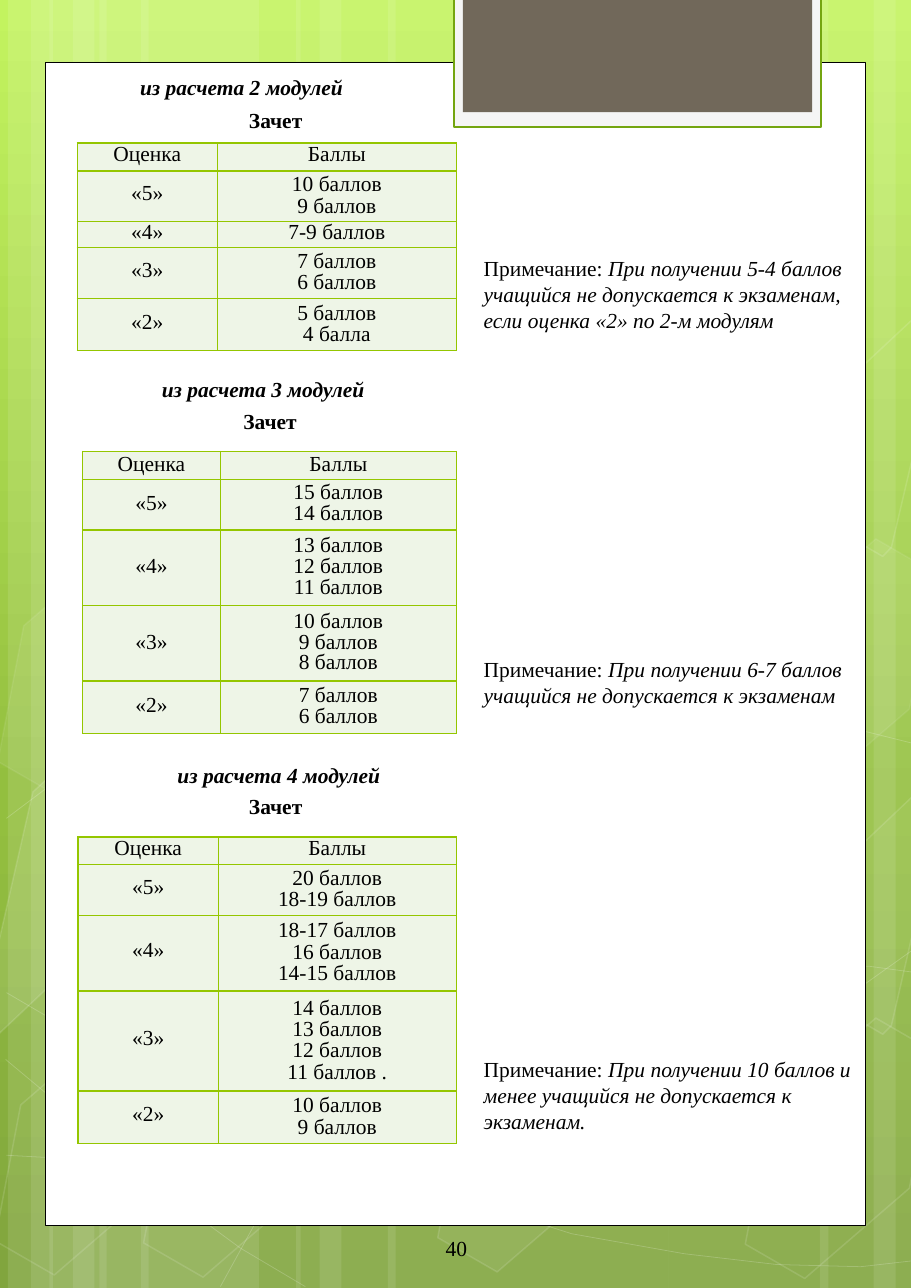
from copy import deepcopy

from lxml import etree
from pptx import Presentation
from pptx.dml.color import RGBColor
from pptx.enum.shapes import MSO_SHAPE
from pptx.enum.text import MSO_ANCHOR, PP_ALIGN
from pptx.oxml.ns import qn
from pptx.util import Cm, Pt

RECTANGLE, HEXAGON = MSO_SHAPE.RECTANGLE, MSO_SHAPE.HEXAGON
LEFT, CENTER, MIDDLE = PP_ALIGN.LEFT, PP_ALIGN.CENTER, MSO_ANCHOR.MIDDLE
WHITE, BLACK, GREEN = "FFFFFF", "000000", "94C600"
FONT = "Times New Roman"
TABLE_RIGHT = 10.52


def paint(shape, fill=None, fill_alpha=100, line=None, width=1, line_alpha=100):
    """Set fill and line; alphas are percent of opacity."""
    shape.shadow.inherit = False
    for part, color, alpha, where in (
        (shape.fill, fill, fill_alpha, "a:solidFill/a:srgbClr"),
        (shape.line.fill, line, line_alpha, "a:ln/a:solidFill/a:srgbClr"),
    ):
        if color is None:
            part.background()
            continue
        part.solid()
        part.fore_color.rgb = RGBColor.from_string(color)
        if alpha < 100:
            srgb = shape.element.spPr.xpath(where)[0]
            etree.SubElement(srgb, qn("a:alpha"), val=str(alpha * 1000))
    if line:
        shape.line.width = Pt(width)


def write(frame, text, align=LEFT, bold=False, italic=False, tail="", spacing=None):
    """Write lines of text, with an italic tail after the last one."""
    frame.text = text
    if tail:
        frame.paragraphs[-1].add_run().text = tail
    for paragraph in frame.paragraphs:
        paragraph.alignment = align
        if spacing:
            paragraph.line_spacing = Pt(spacing)
        for run in paragraph.runs:
            run.font.name, run.font.size = FONT, Pt(14)
            run.font.bold = bold
            run.font.italic = italic or run.text == tail
            run.font.color.rgb = RGBColor.from_string(BLACK)


prs = Presentation()
prs.slide_width, prs.slide_height = Cm(21), Cm(29.7)
slide = prs.slides.add_slide(prs.slide_layouts[6])
shapes = slide.shapes

# Green gradient background
background = slide.background.fill
background.gradient()
background.gradient_angle = 270
stop_list = slide.element.xpath(".//a:gsLst")[0]
stop_list.insert(1, deepcopy(stop_list[0]))
gradient = [(0, "C3F35F"), (0.62, "93BF3F"), (1, "81A53E")]
for stop, (position, color) in zip(background.gradient_stops, gradient):
    stop.position = position
    stop.color.rgb = RGBColor.from_string(color)

# Translucent vertical bands: left, width
bands = [(2.29, 3.68), (0.18, 1.04), (0.71, 1.75), (3.25, 3.68), (1.14, 1.04),
         (1.68, 1.75), (15.42, 3.68), (20.14, 1.04), (18.9, 1.75),
         (8.94, 6.48), (6.83, 1.04), (7.37, 1.75)]
for left, width in bands:
    band = shapes.add_shape(RECTANGLE, Cm(left), 0, Cm(width), prs.slide_height)
    paint(band, WHITE, 10)

# Thin sweeping lines
sweeps = [
    [(0.15, 26.64), (3.99, 26.85), (9.63, 26.34), (16.64, 24.43), (19.38, 23.09),
     (21.16, 21.82)],
    [(0.15, 18.87), (2.54, 17.07), (7.29, 15.32), (13.74, 15.32), (21.16, 17.17)],
    [(0.13, 24.43), (3.84, 27.53), (5.54, 28.78), (7.04, 29.67)],
    [(0.15, 22.89), (2.69, 24.38), (7.49, 26.64), (13.18, 28.45), (15.77, 28.91),
     (17.91, 29.16), (19.84, 29.21), (21.16, 29.06)],
    [(5.08, 29.67), (6.35, 27.36), (8.15, 25.3), (12.78, 22.89), (16.69, 22.28),
     (20.02, 22.28), (21.13, 22.43)],
]
# Hexagons cut by the slide edge, with their fill opacity
cut_hexagons = [
    ([(0.76, 18.26), (1.12, 17.93), (2.72, 18.87), (2.01, 21.92), (-0.28, 24.08),
      (-0.53, 23.93)], 10),
    ([(19.46, 19.86), (21.74, 17.7), (21.89, 17.81), (20.55, 23.65), (20.35, 23.85),
      (18.75, 22.91)], 4),
    ([(19.46, 8.84), (21.74, 6.71), (21.92, 6.78), (20.55, 12.62), (20.35, 12.83),
      (18.75, 11.91)], 0),
]
for points, opacity in [(sweep, None) for sweep in sweeps] + cut_hexagons:
    nodes = [(Cm(x), Cm(y)) for x, y in points]
    builder = shapes.build_freeform(*nodes[0])
    builder.add_line_segments(nodes[1:], close=opacity is not None)
    outline = builder.convert_to_shape()
    if opacity is None:
        paint(outline, line=WHITE, width=0.5, line_alpha=20)
    else:
        paint(outline, WHITE if opacity else None, opacity, WHITE, 1, 12)

# Whole hexagons: left, top, fill opacity, line opacity
for left, top, opacity, line_opacity in [
    (10.44, 23.32, 6, 12), (0.23, 23.39, 0, 12), (0.3, 12.34, 7, 8),
    (3.66, 23.44, 0, 12), (17.53, 23.47, 0, 12), (17.53, 12.42, 7, 8),
]:
    hexagon = shapes.add_shape(HEXAGON, Cm(left), Cm(top), Cm(3.68), Cm(6.02))
    hexagon.adjustments[0] = 0.285
    hexagon.rotation = 30
    paint(hexagon, WHITE if opacity else None, opacity, WHITE, 1, line_opacity)

# White page and the tab at its top
for left, top, width, height, fill, line, weight in [
    (1.04, 1.45, 18.9, 26.8, WHITE, BLACK, 0.5),
    (10.46, -0.1, 8.46, 3.02, "F5F5F5", "74A510", 1.25),
    (10.67, -0.1, 8.05, 2.69, "71685A", None, 0),
]:
    panel = shapes.add_shape(RECTANGLE, Cm(left), Cm(top), Cm(width), Cm(height))
    paint(panel, fill, line=line, width=weight)

# Sections: title, its place, place of "Зачет", place of the table, grade column
# width, line spacing of single and stacked scores, scores, note and its top
sections = [
    ("из расчета 2 модулей", (2.95, 1.55), (5.46, 2.31), (1.78, 3.3), 3.23, (12, 14),
     ["10 баллов\n9 баллов", "7-9 баллов", "7 баллов\n6 баллов", "5 баллов\n4 балла"],
     "При получении 5-4 баллов учащийся не допускается к экзаменам, "
     "если оценка «2» по 2-м модулям", 5.74),
    ("из расчета 3 модулей", (3.45, 8.53), (5.33, 9.25), (1.9, 10.41), 3.18, (13.7, 13.7),
     ["15 баллов\n14 баллов", "13 баллов\n12 баллов\n11 баллов",
      "10 баллов\n9 баллов\n8 баллов", "7 баллов\n6 баллов"],
     "При получении 6-7 баллов учащийся не допускается к экзаменам", 14.99),
    ("из расчета 4 модулей", (3.81, 17.42), (5.46, 18.14), (1.8, 19.3), 3.23, (12, 14),
     ["20 баллов\n18-19 баллов", "18-17 баллов\n16 баллов\n14-15 баллов",
      "14 баллов\n13 баллов\n12 баллов\n11 баллов .", "10 баллов\n9 баллов"],
     "При получении 10 баллов и менее учащийся не допускается к экзаменам.", 24.21),
]
# Text boxes: place, width, height, wrap, text and its format
labels = [((9.3, 28.32), 2.44, 0.89, True, "40", {"align": CENTER})]
for title, title_at, test_at, table_at, grade_width, spacings, scores, note, note_top in sections:
    labels += [
        (title_at, 5.41, 0.89, False, title, {"bold": True, "italic": True}),
        (test_at, 1.85, 0.89, False, "Зачет", {"bold": True}),
        ((10.87, note_top), 9.47, 2.08, True, "Примечание: ", {"tail": note}),
    ]

    # Grade table, with row heights following the number of score lines
    rows = [("Оценка", "Баллы"), *zip(["«5»", "«4»", "«3»", "«2»"], scores)]
    left, top = table_at
    heights = [0.03 + 0.57 * len(score.split("\n")) for _, score in rows]
    heights[0] += 0.04
    heights[-1] += 0.04
    table = shapes.add_table(len(rows), 2, Cm(left), Cm(top),
                             Cm(TABLE_RIGHT - left), Cm(sum(heights))).table
    table.first_row = table.horz_banding = False
    table.columns[0].width = Cm(grade_width)
    table.columns[1].width = Cm(TABLE_RIGHT - left - grade_width)
    for row, height, texts in zip(table.rows, heights, rows):
        row.height = Cm(height)
        for cell, text in zip(row.cells, texts):
            cell.margin_left = cell.margin_right = Cm(0.03)
            cell.margin_top = cell.margin_bottom = 0
            cell.vertical_anchor = MIDDLE
            write(cell.text_frame, text, CENTER, spacing=spacings["\n" in text])
            properties = cell._tc.get_or_add_tcPr()
            for side in ("a:lnL", "a:lnR", "a:lnT", "a:lnB"):
                border = etree.SubElement(properties, qn(side), w=str(Pt(1)))
                solid = etree.SubElement(border, qn("a:solidFill"))
                etree.SubElement(solid, qn("a:srgbClr"), val=GREEN)
            cell.fill.solid()
            cell.fill.fore_color.rgb = RGBColor.from_string("EEF5E7")

# Titles, notes and page number
for (left, top), width, height, wrap, text, style in labels:
    frame = shapes.add_textbox(Cm(left), Cm(top), Cm(width), Cm(height)).text_frame
    frame.word_wrap = wrap
    frame.margin_left = frame.margin_right = Cm(0.28)
    frame.margin_top = frame.margin_bottom = Cm(0.15)
    write(frame, text, **style)

prs.save("out.pptx")
